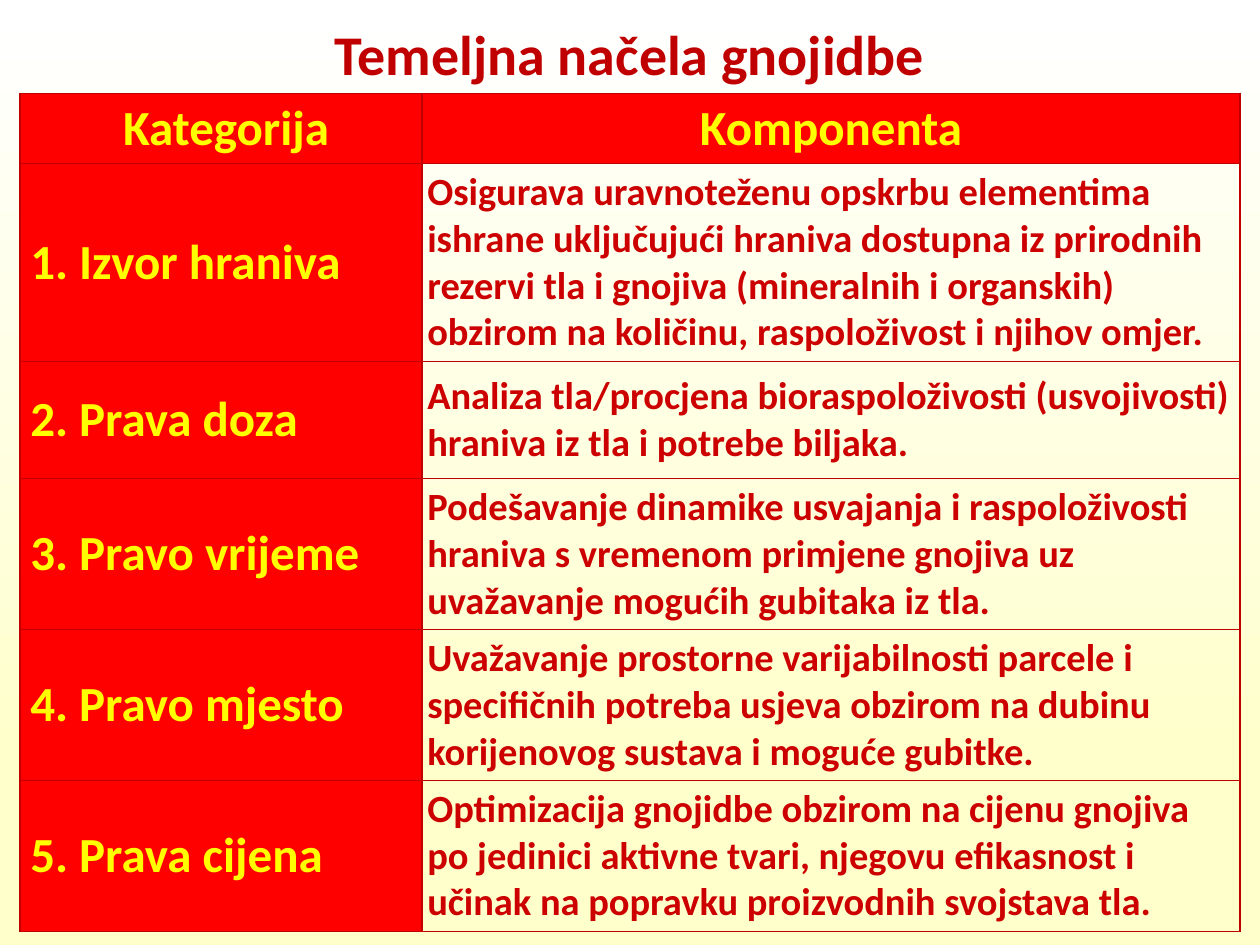
from lxml.etree import SubElement
from pptx import Presentation
from pptx.dml.color import RGBColor
from pptx.enum.text import MSO_ANCHOR as Anchor, MSO_AUTO_SIZE as AutoSize, PP_ALIGN as Align
from pptx.oxml.ns import qn
from pptx.util import Pt

TITLE = "Temeljna načela gnojidbe"
HEADERS = ("Kategorija", "Komponenta")
PRINCIPLES = [
    ("1. Izvor hraniva",
     "Osigurava uravnoteženu opskrbu elementima ishrane uključujući hraniva dostupna "
     "iz prirodnih rezervi tla i gnojiva (mineralnih i organskih) obzirom na količinu, "
     "raspoloživost i njihov omjer."),
    ("2. Prava doza",
     "Analiza tla/procjena bioraspoloživosti (usvojivosti) hraniva iz tla i potrebe biljaka."),
    ("3. Pravo vrijeme",
     "Podešavanje dinamike usvajanja i raspoloživosti hraniva s vremenom primjene gnojiva "
     "uz uvažavanje mogućih gubitaka iz tla."),
    ("4. Pravo mjesto",
     "Uvažavanje prostorne varijabilnosti parcele i specifičnih potreba usjeva obzirom "
     "na dubinu korijenovog sustava i moguće gubitke."),
    ("5. Prava cijena",
     "Optimizacija gnojidbe obzirom na cijenu gnojiva po jedinici aktivne tvari, njegovu "
     "efikasnost i učinak na popravku proizvodnih svojstava tla."),
]
COL_WIDTHS = (229.7, 467.3)
ROW_HEIGHTS = (39, 111, 67, 85, 85, 85)


def rgb(value):
    return RGBColor.from_string(value)


def write(tf, text, size=22, color="CC0000", align=Align.LEFT, hang=0):
    p = tf.paragraphs[0]
    p.alignment = align
    if hang:
        pPr = p._p.get_or_add_pPr()
        pPr.set("marL", str(Pt(hang)))
        pPr.set("indent", str(-Pt(hang)))
    r = p.add_run()
    r.text = text
    r.font.name = "Calibri"
    r.font.size = Pt(size)
    r.font.bold = True
    r.font.color.rgb = rgb(color)


class Deck:
    dark, red, yellow = "C00000", "FF0000", "FFFF00"

    def __init__(self, prs):
        self.s = prs.slides.add_slide(prs.slide_layouts[5])

    def background(self, *stops):
        fill = self.s.background.fill
        fill.gradient()
        fill.gradient_angle = 270
        for stop, (position, color) in zip(fill.gradient_stops, stops):
            stop.position = position
            stop.color.rgb = rgb(color)

    def title(self, text, left, top, width, height):
        sp = self.s.shapes.title
        sp.left, sp.top, sp.width, sp.height = map(Pt, (left, top, width, height))
        tf = sp.text_frame
        tf.word_wrap = True
        tf.auto_size = AutoSize.NONE
        tf.vertical_anchor = Anchor.MIDDLE
        write(tf, text, size=32, color=self.dark, align=Align.CENTER)

    def table(self, left, top, widths, heights):
        frame = self.s.shapes.add_table(len(heights), len(widths), Pt(left), Pt(top),
                                        Pt(sum(widths)), Pt(sum(heights)))
        table = frame.table
        table.first_row = table.horz_banding = False
        for col, width in zip(table.columns, widths):
            col.width = Pt(width)
        for row, height in zip(table.rows, heights):
            row.height = Pt(height)
        return table

    def cell(self, cell, text, fill=None, inset=3, **style):
        cell.vertical_anchor = Anchor.MIDDLE
        cell.margin_left = Pt(inset)
        cell.margin_right = cell.margin_top = cell.margin_bottom = Pt(3)
        self.borders(cell)
        if fill:
            cell.fill.solid()
            cell.fill.fore_color.rgb = rgb(fill)
        else:
            cell.fill.background()
        write(cell.text_frame, text, **style)

    def borders(self, cell):
        tcPr = cell._tc.get_or_add_tcPr()
        for side in ("a:lnL", "a:lnR", "a:lnT", "a:lnB"):
            ln = SubElement(tcPr, qn(side), w=str(Pt(1)))
            SubElement(SubElement(ln, qn("a:solidFill")), qn("a:srgbClr"), val=self.dark)


def main():
    prs = Presentation()
    prs.slide_width, prs.slide_height = Pt(720), Pt(540)
    deck = Deck(prs)
    deck.background((0, "FFFFFF"), (0.8, "FFFFCC"))
    deck.title(TITLE, 11.5, 7.2, 697, 46)

    table = deck.table(11.5, 53.3, COL_WIDTHS, ROW_HEIGHTS)
    label = dict(fill=deck.red, size=28, color=deck.yellow)
    for col, (text, inset, hang) in enumerate(zip(HEADERS, (8.6, 3), (14.4, 0))):
        deck.cell(table.cell(0, col), text, inset=inset, hang=hang, align=Align.CENTER, **label)
    for row, (category, component) in enumerate(PRINCIPLES, 1):
        hang = 28 if row < 3 else 14.4
        deck.cell(table.cell(row, 0), category, inset=5.8, hang=hang, **label)
        deck.cell(table.cell(row, 1), component)
    prs.save("out.pptx")


if __name__ == "__main__":
    main()
